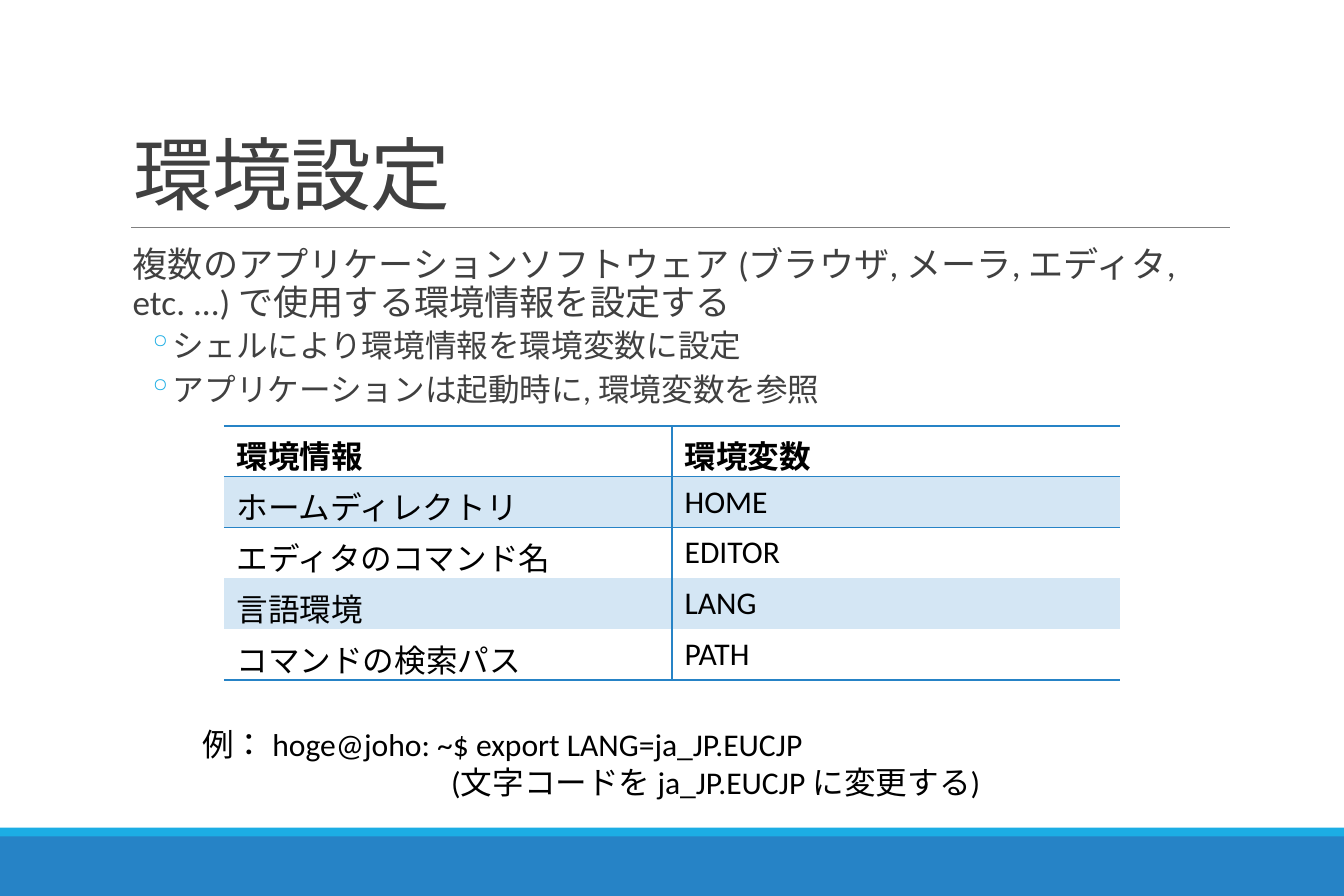
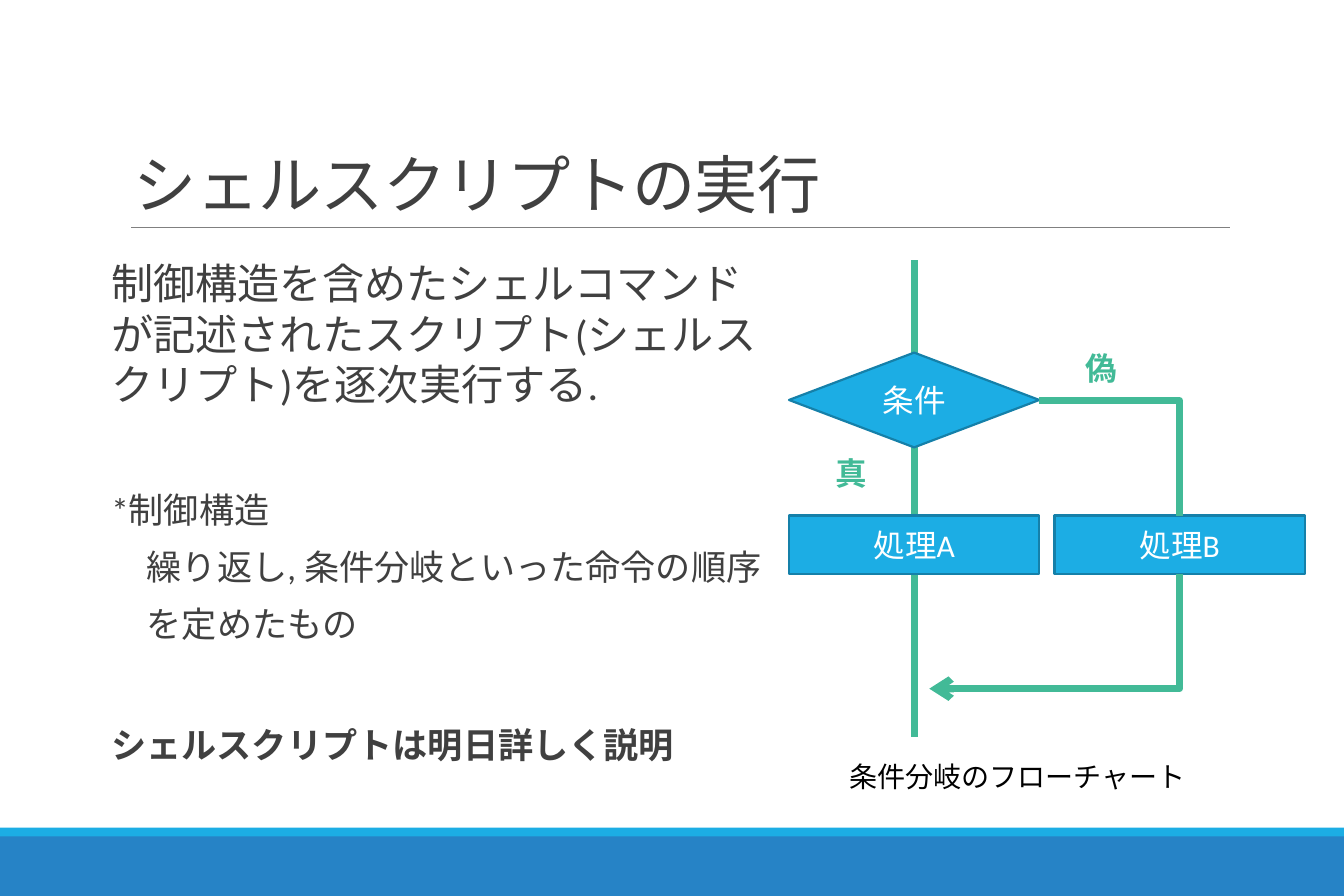
"""Build two Japanese lecture slides on shell environment settings and scripts."""
from dataclasses import dataclass
from typing import Optional

from lxml import etree
from pptx import Presentation
from pptx.dml.color import RGBColor
from pptx.enum import lang, shapes, text
from pptx.oxml import ns
from pptx.util import Inches, Pt

FONT = "Calibri"
BLUE, CYAN, EDGE, GREEN = "2683C6", "1CADE4", "1580A9", "42BA97"
PALE, GREY, RULE, BLACK, WHITE = "D4E6F4", "404040", "808080", "000000", "FFFFFF"
SLIDE_WIDTH, SLIDE_HEIGHT = 10.63, 7.09
PLAIN_TABLE_STYLE = "{2D5ABB26-0587-4C30-8999-92F81FD0307C}"
BODY_INSETS = (0, 0.05, 0, 0.05)
BODY_LEFT = 0.09


@dataclass(frozen=True)
class Box:
    left: float
    top: float
    width: float
    height: float

    def lengths(self) -> tuple:
        return tuple(Inches(v) for v in (self.left, self.top, self.width, self.height))


@dataclass(frozen=True)
class Line:
    text: str
    size: float = 18
    color: str = BLACK
    bold: bool = False
    spacing: Optional[float] = None
    before: float = 0
    after: float = 0
    left: float = 0
    first: float = 0
    bullet: str = ""
    tracking: float = 0
    align: Optional[text.PP_ALIGN] = None


@dataclass(frozen=True)
class Step:
    label: str
    kind: shapes.MSO_SHAPE
    box: Box


def rgb(value: str) -> RGBColor:
    return RGBColor.from_string(value)


def child(parent, tag: str, **attributes: str):
    return etree.SubElement(parent, ns.qn(tag), attributes)


def add_run(paragraph, line: Line) -> None:
    run = paragraph.add_run()
    run.text = line.text
    font = run.font
    font.name, font.size, font.bold = FONT, Pt(line.size), line.bold
    font.color.rgb = rgb(line.color)
    font.language_id = lang.MSO_LANGUAGE_ID.JAPANESE
    if line.tracking:
        font._element.set("spc", str(int(line.tracking * 100)))


def write(frame, lines: list[Line]) -> None:
    for index, line in enumerate(lines):
        paragraph = frame.add_paragraph() if index else frame.paragraphs[0]
        paragraph.alignment = line.align
        paragraph.line_spacing = line.spacing
        paragraph.space_before, paragraph.space_after = Pt(line.before), Pt(line.after)
        properties = paragraph._p.get_or_add_pPr()
        properties.set("marL", str(Inches(line.left)))
        properties.set("indent", str(Inches(line.first)))
        if line.bullet:
            child(child(properties, "a:buClr"), "a:srgbClr", val=CYAN)
            child(properties, "a:buChar", char=line.bullet)
        add_run(paragraph, line)


def add_text(slide, box: Box, lines: list[Line], insets=(0.1, 0.05, 0.1, 0.05),
             anchor=text.MSO_ANCHOR.TOP, wrap: bool = True) -> None:
    frame = slide.shapes.add_textbox(*box.lengths()).text_frame
    frame.word_wrap, frame.vertical_anchor = wrap, anchor
    frame.margin_left, frame.margin_top, frame.margin_right, frame.margin_bottom = map(Inches, insets)
    if not wrap:
        frame.auto_size = text.MSO_AUTO_SIZE.SHAPE_TO_FIT_TEXT
    write(frame, lines)


def add_block(slide, kind: shapes.MSO_SHAPE, box: Box, fill: str, edge: Optional[str] = None):
    shape = slide.shapes.add_shape(kind, *box.lengths())
    shape.shadow.inherit = False
    shape.fill.solid()
    shape.fill.fore_color.rgb = rgb(fill)
    if edge:
        shape.line.color.rgb = rgb(edge)
        shape.line.width = Pt(1.25)
    else:
        shape.line.fill.background()
    return shape


def add_line(slide, start: tuple, end: tuple, color: str, width: float,
             elbow: bool = False, arrow_at_start: bool = False):
    kind = shapes.MSO_CONNECTOR.ELBOW if elbow else shapes.MSO_CONNECTOR.STRAIGHT
    connector = slide.shapes.add_connector(kind, *map(Inches, (*start, *end)))
    connector.line.color.rgb = rgb(color)
    connector.line.width = Pt(width)
    properties = connector._element.spPr
    if elbow:
        properties.find(ns.qn("a:prstGeom")).set("prst", "bentConnector2")
    if arrow_at_start:
        child(properties.find(ns.qn("a:ln")), "a:headEnd", type="arrow")
    child(properties, "a:effectLst")
    return connector


def add_base(presentation, title: str, size: float):
    slide = presentation.slides.add_slide(presentation.slide_layouts[6])
    for top, height, color in ((6.61, 0.48, BLUE), (6.55, 0.07, CYAN)):
        add_block(slide, shapes.MSO_SHAPE.RECTANGLE, Box(0, top, SLIDE_WIDTH, height), color)
    add_line(slide, (1.04, 1.8), (9.73, 1.8), RULE, 0.5)
    add_text(slide, Box(0.96, 0.3, 8.77, 1.5),
             [Line(title, size, GREY, spacing=0.85, tracking=-0.5)],
             anchor=text.MSO_ANCHOR.BOTTOM)
    return slide


def set_borders(cell, sides: list[str]) -> None:
    properties = cell._tc.get_or_add_tcPr()
    for position, side in enumerate(s for s in "LRTB" if s in sides):
        border = etree.Element(ns.qn(f"a:ln{side}"), {"w": str(Pt(1))})
        child(child(border, "a:solidFill"), "a:srgbClr", val=BLUE)
        properties.insert(position, border)


def add_grid(slide, box: Box, rows: list[tuple[str, str]]) -> None:
    table = slide.shapes.add_table(len(rows), 2, *box.lengths()).table
    table.first_row = table.horz_banding = False
    table._tbl.tblPr.find(ns.qn("a:tableStyleId")).text = PLAIN_TABLE_STYLE
    for r, row in enumerate(rows):
        for c, value in enumerate(row):
            cell = table.cell(r, c)
            write(cell.text_frame, [Line(value, bold=r == 0)])
            if r % 2:
                cell.fill.solid()
                cell.fill.fore_color.rgb = rgb(PALE)
            else:
                cell.fill.background()
            sides = ["L" if c else "R"]
            sides += ["T"] if r in (0, 1) else []
            sides += ["B"] if r in (0, len(rows) - 1) else []
            set_borders(cell, sides)


def build_environment(presentation) -> None:
    slide = add_base(presentation, "環境設定", 45.4)
    points = ("シェルにより環境情報を環境変数に設定", "アプリケーションは起動時に, 環境変数を参照")
    intro = Line("複数のアプリケーションソフトウェア (ブラウザ, メーラ, エディタ, etc. ...) "
                 "で使用する環境情報を設定する", 20, GREY, spacing=0.9, after=1.9, left=BODY_LEFT)
    add_text(slide, Box(0.96, 1.91, 8.77, 1.4),
             [intro] + [Line(point, 18, GREY, spacing=0.9, before=1.9, after=3.8,
                             left=0.4, first=-0.19, bullet="◦") for point in points],
             BODY_INSETS)
    add_grid(slide, Box(1.77, 3.37, 7.09, 2.01), [
        ("環境情報", "環境変数"),
        ("ホームディレクトリ", "HOME"),
        ("エディタのコマンド名", "EDITOR"),
        ("言語環境", "LANG"),
        ("コマンドの検索パス", "PATH"),
    ])
    add_text(slide, Box(1.5, 5.69, 7.55, 0.71), [
        Line("例： hoge@joho: ~$ export LANG=ja_JP.EUCJP"),
        Line("(文字コードを ja_JP.EUCJP に変更する)", left=1.97),
    ])


def build_script(presentation) -> None:
    slide = add_base(presentation, "シェルスクリプトの実行", 36)

    def note(value: str, before: float = 11.3, first: float = 0, bold: bool = False) -> Line:
        return Line(value, 20, GREY, bold, 0.8, before, 1.9, BODY_LEFT, first)

    add_text(slide, Box(0.79, 1.99, 5.28, 4.16), [
        Line("制御構造を含めたシェルコマンドが記述されたスクリプト(シェルスクリプト)を逐次実行する.",
             24, GREY, after=1.9, left=BODY_LEFT),
        note("*制御構造", before=48),
        note("繰り返し, 条件分岐といった命令の順序", first=0.28),
        note("を定めたもの", first=0.28),
        note("シェルスクリプトは明日詳しく説明", before=48, bold=True),
    ], BODY_INSETS)

    add_line(slide, (7.23, 2.06), (7.23, 5.83), GREEN, 4)
    process = shapes.MSO_SHAPE.FLOWCHART_PROCESS
    steps = [
        Step("条件", shapes.MSO_SHAPE.FLOWCHART_DECISION, Box(6.24, 2.79, 1.98, 0.75)),
        Step("処理A", process, Box(6.24, 4.08, 1.98, 0.46)),
        Step("処理B", process, Box(8.34, 4.08, 1.98, 0.46)),
    ]
    for step in steps:
        shape = add_block(slide, step.kind, step.box, CYAN, EDGE)
        shape.text_frame.vertical_anchor = text.MSO_ANCHOR.MIDDLE
        write(shape.text_frame, [Line(step.label, color=WHITE, align=text.PP_ALIGN.CENTER)])
    add_line(slide, (8.22, 3.17), (9.33, 4.08), GREEN, 4, elbow=True)
    add_line(slide, (7.35, 5.45), (9.33, 4.54), GREEN, 4, elbow=True, arrow_at_start=True)

    for label, left, top in (("偽", 8.49, 2.71), ("真", 6.51, 3.54)):
        add_text(slide, Box(left, top, 0.45, 0.4), [Line(label, color=GREEN, bold=True)], wrap=False)
    add_text(slide, Box(6.62, 5.96, 3.44, 0.37), [Line("条件分岐のフローチャート", 16)])


def main() -> None:
    presentation = Presentation()
    presentation.slide_width, presentation.slide_height = Inches(SLIDE_WIDTH), Inches(SLIDE_HEIGHT)
    build_environment(presentation)
    build_script(presentation)
    presentation.save("out.pptx")


if __name__ == "__main__":
    main()
